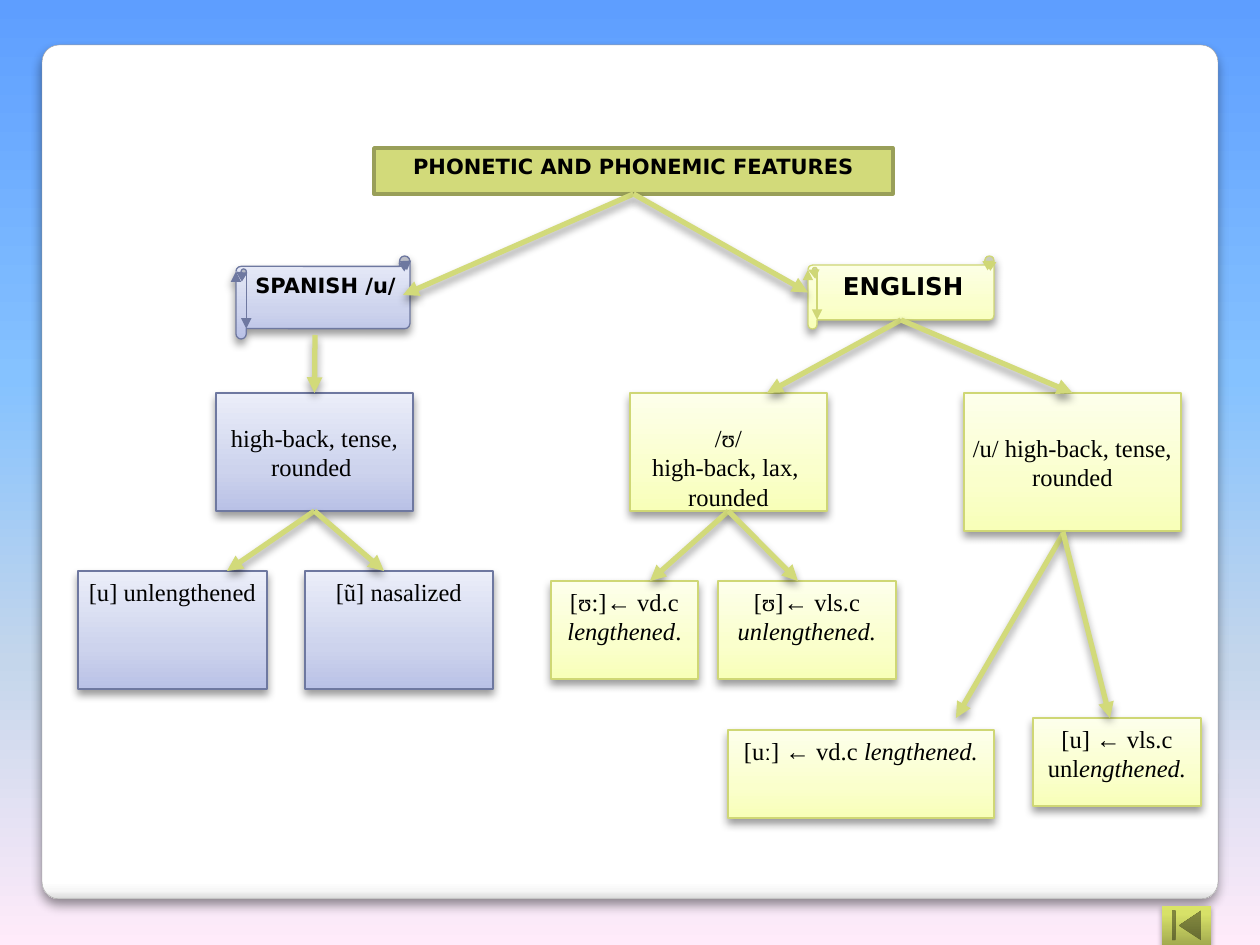
"""Build a slide with a tree of phonetic and phonemic features of Spanish and English /u/."""
from dataclasses import dataclass
from typing import Any, Optional

import pptx
import pptx.dml.color
import pptx.enum.shapes
import pptx.enum.text
import pptx.oxml
import pptx.oxml.ns
import pptx.util
from lxml import etree

EMU_PER_PX = 914400 / 126
INSET = 6
SHAPES = pptx.enum.shapes.MSO_SHAPE
ANCHORS = pptx.enum.text.MSO_ANCHOR
TOP, LEFT, BOTTOM = 0, 1, 2
SERIF, SANS = "Times New Roman", "DejaVu Sans"

COLORS = {
    "text": "000000", "arrow": "D2DA7A", "title_line": "999F59",
    "blue": "B9C1E6", "blue_mid": "CDD3ED", "blue_light": "EBEEF9", "blue_line": "6E78A0",
    "green": "F8FFB8", "green_mid": "FAFFCC", "green_light": "FDFFEB", "green_line": "CFD775",
    "sky": "5E9EFF", "sky_mid": "85C2FF", "sky_pale": "C4D6EB", "pink": "FFEBFA",
    "white": "FFFFFF", "gray_light": "F7F7F7", "gray": "D9D9D9", "panel_line": "A2A1A1",
    "button": "A3AB4F", "button_mid": "D7E168", "button_top": "DAE466",
}


@dataclass(frozen=True)
class Shadow:
    """Downward shadow: opacity in percent, lengths in points."""
    opacity: int
    blur: float
    distance: float


@dataclass(frozen=True)
class Style:
    """Fill stops as (percent, colour), outline and shadow; angle runs counter-clockwise."""
    stops: tuple[tuple[int, str], ...]
    line: Optional[str] = None
    width: float = 0.75
    shadow: Optional[Shadow] = None
    angle: int = 90


@dataclass(frozen=True)
class Box:
    """A shape in px; asterisks in the text enclose italics."""
    key: str
    left: int
    top: int
    width: int
    height: int
    style: Style
    text: str = ""
    kind: Any = SHAPES.RECTANGLE
    font: str = SERIF
    size: int = 14
    anchor: Any = ANCHORS.TOP
    bottom_inset: int = INSET


@dataclass(frozen=True)
class Arrow:
    """An arrow in px, optionally joined to (box key, side)."""
    start: tuple[int, int]
    end: tuple[int, int]
    source: Optional[tuple[str, int]] = None
    target: Optional[tuple[str, int]] = None


SOFT = Shadow(40, 5, 3)
BLUE = Style(((0, "blue"), (35, "blue_mid"), (100, "blue_light")), "blue_line", shadow=SOFT)
GREEN = Style(((0, "green"), (35, "green_mid"), (100, "green_light")), "green_line", shadow=SOFT)
TITLE = Style(((0, "arrow"),), "title_line", 2)
PANEL = Style(((0, "white"), (98, "white"), (99, "gray_light"), (100, "gray")), "panel_line", 0.25,
              Shadow(44, 6, 4), 270)
BUTTON = Style(((0, "button"), (80, "button_mid"), (100, "button_top")), shadow=Shadow(35, 3, 1.8))
SKY = ((0, "sky"), (40, "sky_mid"), (70, "sky_pale"), (100, "pink"))

BOXES = [
    Box("panel", 42, 45, 1176, 854, PANEL, kind=SHAPES.ROUNDED_RECTANGLE),
    Box("spanish", 236, 256, 174, 83, BLUE, "SPANISH /u/", SHAPES.HORIZONTAL_SCROLL, SANS, 12),
    Box("english", 808, 256, 186, 73, GREEN, "ENGLISH", SHAPES.HORIZONTAL_SCROLL, SANS),
    Box("spanish tense", 216, 393, 197, 118, BLUE, "high-back, tense, rounded ", anchor=ANCHORS.MIDDLE),
    Box("english lax", 630, 393, 197, 118, GREEN, "/ʊ/\nhigh-back, lax, \nrounded",
        anchor=ANCHORS.BOTTOM, bottom_inset=0),
    Box("english tense", 964, 393, 217, 138, GREEN, "/u/ high-back, tense, rounded", anchor=ANCHORS.MIDDLE),
    Box("lax lengthened", 551, 581, 147, 98, GREEN, "[ʊ:]← vd.c *lengthened*."),
    Box("spanish unlengthened", 78, 571, 189, 118, BLUE, "[u] unlengthened"),
    Box("spanish nasalized", 305, 571, 188, 118, BLUE, "[ũ] nasalized"),
    Box("lax unlengthened", 718, 581, 178, 98, GREEN, "[ʊ]← vls.c *unlengthened.*"),
    Box("tense lengthened", 728, 730, 266, 88, GREEN, "[uː] ← vd.c *lengthened.*"),
    Box("tense unlengthened", 1033, 718, 168, 88, GREEN, "[u] ← vls.c unl*engthened.*"),
    Box("title", 374, 148, 519, 46, TITLE, "PHONETIC AND PHONEMIC FEATURES", font=SANS, size=12),
    Box("back button", 1162, 906, 49, 39, BUTTON, kind=SHAPES.ACTION_BUTTON_BEGINNING),
]

ARROWS = [
    Arrow((634, 194), (403, 295), ("title", BOTTOM)),
    Arrow((634, 194), (808, 292), ("title", BOTTOM), ("english", LEFT)),
    Arrow((315, 335), (315, 393), None, ("spanish tense", TOP)),
    Arrow((315, 511), (227, 571), ("spanish tense", BOTTOM)),
    Arrow((315, 511), (384, 571), ("spanish tense", BOTTOM)),
    Arrow((728, 511), (650, 581), ("english lax", BOTTOM)),
    Arrow((728, 511), (798, 581), ("english lax", BOTTOM)),
    Arrow((1063, 534), (956, 718)),
    Arrow((1063, 532), (1110, 718)),
    Arrow((901, 320), (767, 393)),
    Arrow((901, 320), (1073, 393), None, ("english tense", TOP)),
]


def px(length: int) -> int:
    """Turn px into EMU."""
    return round(length * EMU_PER_PX)


def rgb(name: str) -> pptx.dml.color.RGBColor:
    """Look up a named colour."""
    return pptx.dml.color.RGBColor.from_string(COLORS[name])


def add_child(parent: Any, tag: str, **attributes: Any) -> Any:
    """Append a DrawingML element."""
    values = {key: str(value) for key, value in attributes.items()}
    return etree.SubElement(parent, pptx.oxml.ns.qn(tag), values)


def paint_gradient(fill: Any, element: Any, stops: tuple[tuple[int, str], ...], angle: int) -> None:
    """Give a fill any number of gradient stops."""
    fill.gradient()
    fill.gradient_angle = angle
    stop_list = element.find(".//" + pptx.oxml.ns.qn("a:gsLst"))
    for stop in list(stop_list):
        stop_list.remove(stop)
    for percent, color in stops:
        add_child(add_child(stop_list, "a:gs", pos=percent * 1000), "a:srgbClr", val=COLORS[color])


def add_shadow(effects: Any, shadow: Shadow) -> None:
    """Fill an effect list with a downward shadow."""
    outer = add_child(effects, "a:outerShdw", blurRad=pptx.util.Pt(shadow.blur),
                      dist=pptx.util.Pt(shadow.distance), dir=5400000, rotWithShape=0)
    color = add_child(outer, "a:srgbClr", val=COLORS["text"])
    add_child(color, "a:alpha", val=shadow.opacity * 1000)


def style_line(line: Any, color: str, width: float, arrowhead: bool) -> None:
    """Set colour, width and arrowhead of an outline."""
    line.color.rgb = rgb(color)
    line.width = pptx.util.Pt(width)
    if arrowhead:
        add_child(line._get_or_add_ln(), "a:tailEnd", type="triangle")


def write_text(shape: Any, box: Box) -> None:
    """Write centred text with italics between asterisks."""
    frame = shape.text_frame
    frame.word_wrap = True
    frame.vertical_anchor = box.anchor
    frame.margin_left = frame.margin_right = frame.margin_top = px(INSET)
    frame.margin_bottom = px(box.bottom_inset)
    frame.text = box.text
    for paragraph in frame.paragraphs:
        first, *others = paragraph.text.split("*")
        paragraph.text = first
        paragraph.alignment = pptx.enum.text.PP_ALIGN.CENTER
        for part in filter(None, others):
            paragraph.add_run().text = part
        for index, run in enumerate(paragraph.runs):
            run.font.name, run.font.size = box.font, pptx.util.Pt(box.size)
            run.font.bold, run.font.italic = box.font == SANS, index % 2 == 1
            run.font.color.rgb = rgb("text")


def draw_box(slide: Any, box: Box) -> Any:
    """Draw one styled shape with its text."""
    shape = slide.shapes.add_shape(box.kind, *map(px, (box.left, box.top, box.width, box.height)))
    style = box.style
    if len(style.stops) == 1:
        shape.fill.solid()
        shape.fill.fore_color.rgb = rgb(style.stops[0][1])
    else:
        paint_gradient(shape.fill, shape.element, style.stops, style.angle)
    if style.line:
        style_line(shape.line, style.line, style.width, box.kind == SHAPES.HORIZONTAL_SCROLL)
    else:
        shape.line.fill.background()
    shape.shadow.inherit = False
    if style.shadow:
        add_shadow(shape.element.find(".//" + pptx.oxml.ns.qn("a:effectLst")), style.shadow)
    if box.kind == SHAPES.ROUNDED_RECTANGLE:
        shape.adjustments[0] = 0.02
    if box.text:
        write_text(shape, box)
    return shape


def draw_arrow(slide: Any, arrow: Arrow, shapes: dict[str, Any]) -> None:
    """Draw one arrow and join it to its boxes."""
    connector = slide.shapes.add_connector(pptx.enum.shapes.MSO_CONNECTOR.STRAIGHT,
                                           *map(px, arrow.start + arrow.end))
    if arrow.source:
        connector.begin_connect(shapes[arrow.source[0]], arrow.source[1])
    if arrow.target:
        connector.end_connect(shapes[arrow.target[0]], arrow.target[1])
    style_line(connector.line, "arrow", 3, True)
    add_shadow(add_child(connector.element.spPr, "a:effectLst"), SOFT)


def main() -> None:
    """Build and save the slide."""
    presentation = pptx.Presentation()
    presentation.slide_width, presentation.slide_height = px(1260), px(945)
    slide = presentation.slides.add_slide(presentation.slide_layouts[6])
    paint_gradient(slide.background.fill, slide.element, SKY, 270)
    shapes = {box.key: draw_box(slide, box) for box in BOXES}
    for arrow in ARROWS:
        draw_arrow(slide, arrow, shapes)
    presentation.save("out.pptx")


if __name__ == "__main__":
    main()
